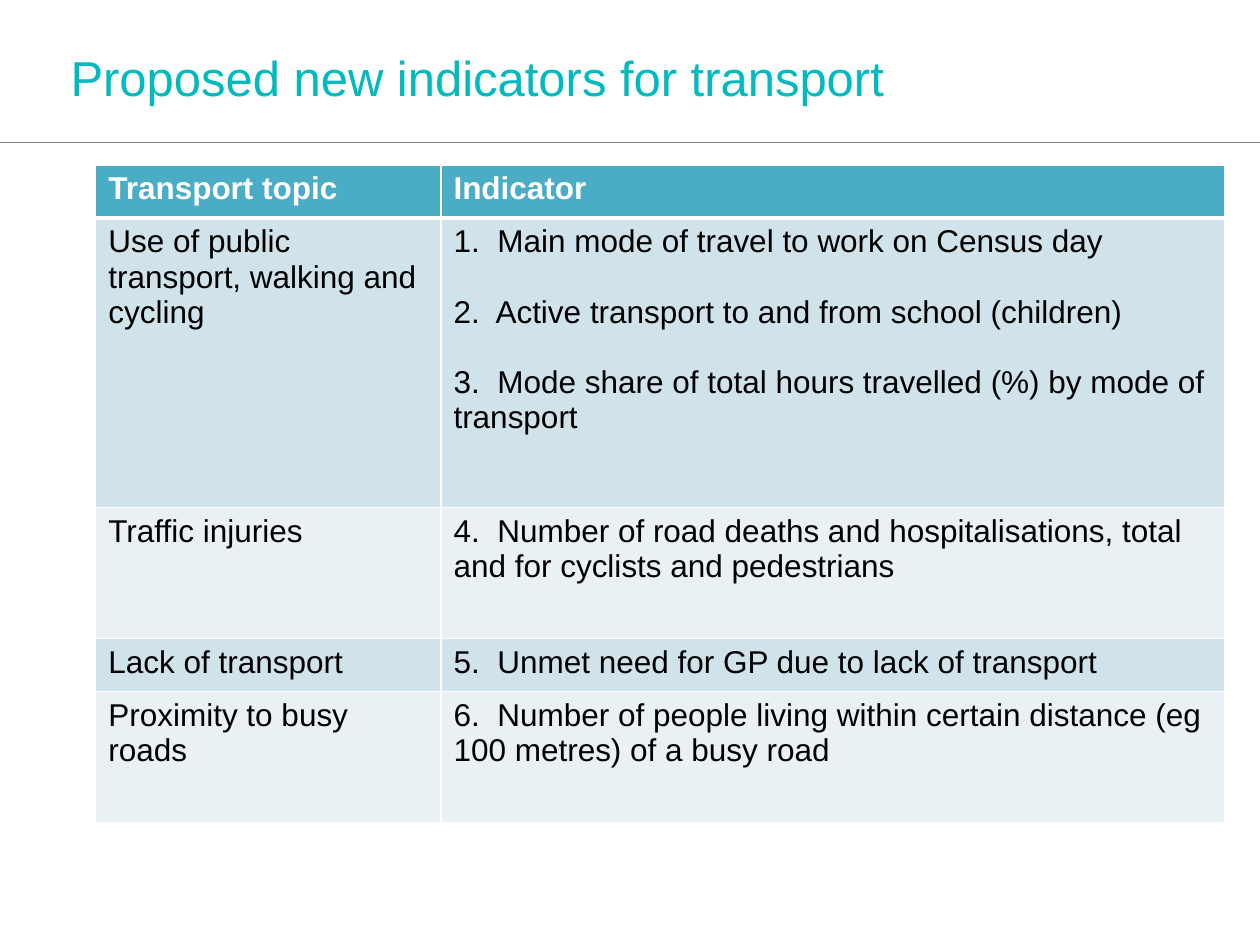
from dataclasses import dataclass

from lxml.etree import SubElement
from pptx import Presentation
from pptx.dml.color import RGBColor
from pptx.enum.shapes import MSO_CONNECTOR
from pptx.enum.text import MSO_ANCHOR, PP_ALIGN
from pptx.oxml.ns import qn
from pptx.slide import Slide
from pptx.util import Inches, Pt

TEAL = RGBColor(0x00, 0xBA, 0xBF)
GREY = RGBColor(0x80, 0x80, 0x80)
WHITE = RGBColor(0xFF, 0xFF, 0xFF)
BLACK = RGBColor(0x00, 0x00, 0x00)
HEADER_BLUE = RGBColor(0x4B, 0xAC, 0xC6)
BANDS = (RGBColor(0xD0, 0xE3, 0xEA), RGBColor(0xE9, 0xF1, 0xF5))

COLUMN_WIDTHS = (2.74, 6.22)
ROW_HEIGHTS = (0.42, 2.3, 1.04, 0.42, 1.04)
ROWS = (
    ("Transport topic", ["Indicator"]),
    ("Use of public transport, walking and cycling", [
        "1.  Main mode of travel to work on Census day",
        "2.  Active transport to and from school (children)",
        "3.  Mode share of total hours travelled (%) by mode of transport",
    ]),
    ("Traffic injuries", [
        "4.  Number of road deaths and hospitalisations, "
        "total and for cyclists and pedestrians",
    ]),
    ("Lack of transport", ["5.  Unmet need for GP due to lack of transport"]),
    ("Proximity to busy roads", [
        "6.  Number of people living within certain distance "
        "(eg 100 metres) of a busy road",
    ]),
)


@dataclass
class SlideBuilder:
    slide: Slide
    font_name: str = "Arial"
    title_size: int = 28
    body_size: int = 18

    def style(self, paragraph, size, color, bold=False):
        paragraph.alignment = PP_ALIGN.LEFT
        font = paragraph.font
        font.name, font.size, font.bold = self.font_name, Pt(size), bold
        font.color.rgb = color

    def title(self, text, left, top, width, height):
        title = self.slide.shapes.title
        title.left, title.top = Inches(left), Inches(top)
        title.width, title.height = Inches(width), Inches(height)
        frame = title.text_frame
        frame.text = text
        frame.vertical_anchor = MSO_ANCHOR.TOP
        frame.margin_top = Inches(0.09)
        self.style(frame.paragraphs[0], self.title_size, TEAL)

    def rule(self, y, width):
        line = self.slide.shapes.add_connector(
            MSO_CONNECTOR.STRAIGHT, 0, Inches(y), Inches(width), Inches(y))
        line.line.color.rgb = GREY
        line.line.width = Pt(0.25)
        SubElement(line._element.spPr, qn("a:effectLst"))

    def borders(self, cell, bottom_width):
        properties = cell._tc.get_or_add_tcPr()
        for side, width in (("L", 1), ("R", 1), ("T", 1), ("B", bottom_width)):
            border = SubElement(properties, qn(f"a:ln{side}"), w=str(Pt(width)))
            fill = SubElement(border, qn("a:solidFill"))
            SubElement(fill, qn("a:srgbClr"), val=str(WHITE))

    def cell(self, cell, lines, fill, color, bold, bottom_width):
        self.borders(cell, bottom_width)
        cell.fill.solid()
        cell.fill.fore_color.rgb = fill
        cell.text = "\n".join(lines)
        for index, paragraph in enumerate(cell.text_frame.paragraphs):
            if index:
                paragraph.space_before = Pt(20)
            self.style(paragraph, self.body_size, color, bold)

    def table(self, rows, left, top):
        table = self.slide.shapes.add_table(
            len(rows), len(COLUMN_WIDTHS), Inches(left), Inches(top),
            Inches(sum(COLUMN_WIDTHS)), Inches(sum(ROW_HEIGHTS))).table
        for column, width in zip(table.columns, COLUMN_WIDTHS):
            column.width = Inches(width)
        for index, (topic, indicators) in enumerate(rows):
            table.rows[index].height = Inches(ROW_HEIGHTS[index])
            if index == 0:
                look = (HEADER_BLUE, WHITE, True, 3)
            else:
                look = (BANDS[(index - 1) % 2], BLACK, False, 1)
            self.cell(table.cell(index, 0), [topic], *look)
            self.cell(table.cell(index, 1), indicators, *look)


def main():
    presentation = Presentation()
    presentation.slide_width = Inches(10)
    presentation.slide_height = Inches(7.5)
    title_only = presentation.slide_layouts[5]
    builder = SlideBuilder(presentation.slides.add_slide(title_only))
    builder.rule(1.13, 10)
    builder.title("Proposed new indicators for transport", 0.46, 0.29, 8.61, 0.79)
    builder.table(ROWS, 0.76, 1.31)
    presentation.save("out.pptx")


if __name__ == "__main__":
    main()
